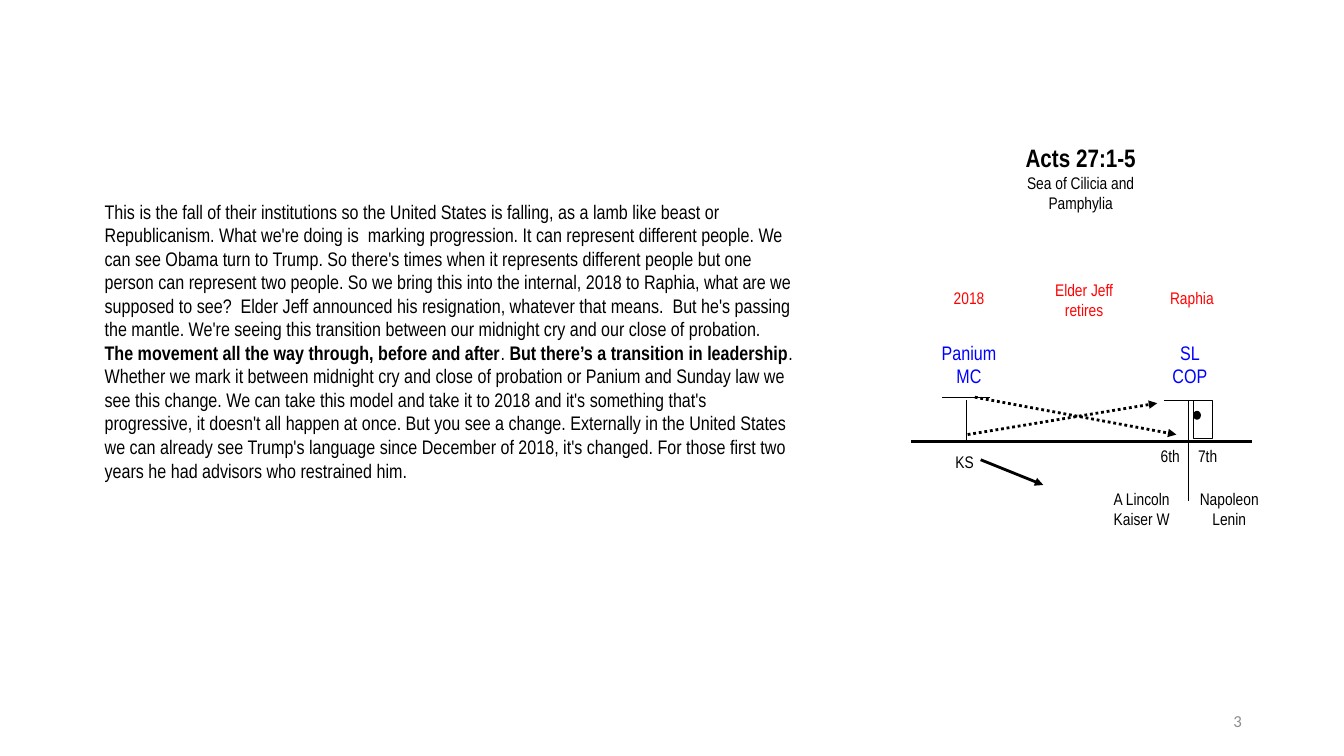
from lxml import etree
from pptx import Presentation
from pptx.dml.color import RGBColor
from pptx.enum import dml, shapes, text
from pptx.oxml import ns
from pptx.util import Pt

BLACK = RGBColor(0, 0, 0)
RED = RGBColor(255, 0, 0)
BLUE = RGBColor(0, 0, 255)
GREY = RGBColor(0x8C, 0x8C, 0x8C)
NARROW = "Arial Narrow"

STORY = [
    ("This is the fall of their institutions so the United States is falling, "
     "as a lamb like beast or Republicanism. What we're doing is  marking "
     "progression. It can represent different people. We can see Obama turn to "
     "Trump. So there's times when it represents different people but one person "
     "can represent two people. So we bring this into the internal, 2018 to "
     "Raphia, what are we supposed to see?  Elder Jeff announced his resignation, "
     "whatever that means.  But he's passing the mantle. We're seeing this "
     "transition between our midnight cry and our close of probation. ", False),
    ("The movement all the way through, before and after", True),
    (". ", False),
    ("But there’s a transition in leadership", True),
    (". Whether we mark it between midnight cry and close of probation or Panium "
     "and Sunday law we see this change. We can take this model and take it to "
     "2018 and it's something that's progressive, it doesn't all happen at once. "
     "But you see a change. Externally in the United States we can already see "
     "Trump's language since December of 2018, it's changed. For those first two "
     "years he had advisors who restrained him.", False),
]


def style(span, size, color=BLACK, bold=False, font=NARROW):
    span.font.name = font
    span.font.size = Pt(size)
    span.font.bold = bold
    span.font.color.rgb = color


def add_box(page, left, top, width, height):
    box = page.shapes.add_textbox(Pt(left), Pt(top), Pt(width), Pt(height))
    box.text_frame.word_wrap = True
    return box


def add_label(page, left, top, width, height, words, size=12, color=BLACK):
    frame = add_box(page, left, top, width, height).text_frame
    frame.margin_left = frame.margin_right = Pt(2.9)
    frame.margin_top = frame.margin_bottom = Pt(2.9)
    frame.text = words
    for para in frame.paragraphs:
        para.alignment = text.PP_ALIGN.CENTER
        for span in para.runs:
            style(span, size, color)
    return frame


def add_line(page, x1, y1, x2, y2, weight, arrow=False, dotted=False):
    line = page.shapes.add_connector(
        shapes.MSO_CONNECTOR.STRAIGHT, Pt(x1), Pt(y1), Pt(x2), Pt(y2))
    line.line.color.rgb = BLACK
    line.line.width = Pt(weight)
    if dotted:
        line.line.dash_style = dml.MSO_LINE.ROUND_DOT
    if arrow:
        etree.SubElement(line.line._get_or_add_ln(), ns.qn("a:tailEnd"), type="triangle")
    etree.SubElement(line._element.spPr, ns.qn("a:effectLst"))


def add_outline(page, kind, left, top, width, height, weight, filled=False):
    shape = page.shapes.add_shape(kind, Pt(left), Pt(top), Pt(width), Pt(height))
    shape.shadow.inherit = False
    shape.line.color.rgb = BLACK
    shape.line.width = Pt(weight)
    if filled:
        shape.fill.solid()
        shape.fill.fore_color.rgb = BLACK
    else:
        shape.fill.background()


def add_story(page, left, top, width, height):
    para = add_box(page, left, top, width, height).text_frame.paragraphs[0]
    for words, bold in STORY:
        span = para.add_run()
        span.text = words
        style(span, 14, bold=bold)


def add_heading(page, left, top, width, height):
    frame = add_label(page, left, top, width, height,
                      "Acts 27:1-5\nSea of Cilicia and Pamphylia")
    style(frame.paragraphs[0].runs[0], 18, bold=True)


def add_timeline(page, left, top, width):
    axis = top + 118.8
    start, end = left + 39.6, left + 198
    bar_start, bar_end = axis - 31.7, axis - 29.5

    labels = [
        (16.4, 6.4, 49.7, 36, "2018", 12, RED),
        (98.6, 0, 49.7, 41, "Elder Jeff\nretires", 12, RED),
        (175.6, 5.8, 49.7, 36, "Raphia", 12, RED),
        (16.4, 43.9, 49.7, 40.3, "Panium\nMC", 14, BLUE),
        (174.2, 43.9, 49.7, 40.3, "SL\nCOP", 14, BLUE),
        (22.3, 123.1, 31.7, 18, "KS", 12, BLACK),
        (171.3, 118.8, 27.4, 22.3, "6th", 12, BLACK),
        (198, 118.8, 27.4, 22.3, "7th", 12, BLACK),
        (139.7, 149.7, 49.7, 36, "A Lincoln\nKaiser W", 12, BLACK),
        (202.3, 149.7, 49.7, 36, "Napoleon\nLenin", 12, BLACK),
    ]
    for x, y, *rest in labels:
        add_label(page, left + x, top + y, *rest)

    for waymark, bar in ((start, bar_start), (end, bar_end)):
        add_line(page, waymark, bar_end, waymark, axis, 0.75)
        add_line(page, waymark - 17.5, bar, waymark + 17, bar, 0.75)
    add_outline(page, shapes.MSO_SHAPE.RECTANGLE, end + 3.6, bar_end, 13.7, 27.4, 0.25)
    add_outline(page, shapes.MSO_SHAPE.OVAL, end + 4.3, bar_end + 8.6, 3.6, 4.3, 2, True)

    add_line(page, left + width, axis, left, axis, 2)
    add_line(page, start + 0.7, axis - 5, end - 22.3, axis - 27.4, 2, True, True)
    add_line(page, start + 5.8, bar_start, end - 8.6, axis - 5, 2, True, True)
    add_line(page, end, axis - 2.9, end, axis + 42.5, 1)
    add_line(page, start + 10, axis + 13, start + 54.7, axis + 31, 2, True)


def add_page_number(page, left, top, width, height):
    frame = add_box(page, left, top, width, height).text_frame
    frame.vertical_anchor = text.MSO_ANCHOR.MIDDLE
    frame.text = "3"
    frame.paragraphs[0].alignment = text.PP_ALIGN.RIGHT
    style(frame.paragraphs[0].runs[0], 12, GREY, font="Calibri")


def main():
    deck = Presentation()
    deck.slide_width, deck.slide_height = Pt(960), Pt(540)
    page = deck.slides.add_slide(deck.slide_layouts[6])
    add_story(page, 67.7, 139, 506.9, 232.6)
    add_heading(page, 711.4, 98.6, 121, 63.4)
    add_timeline(page, 650.9, 196.6, 243.4)
    add_page_number(page, 678.2, 500.4, 216, 28.8)
    deck.save("out.pptx")


if __name__ == "__main__":
    main()
